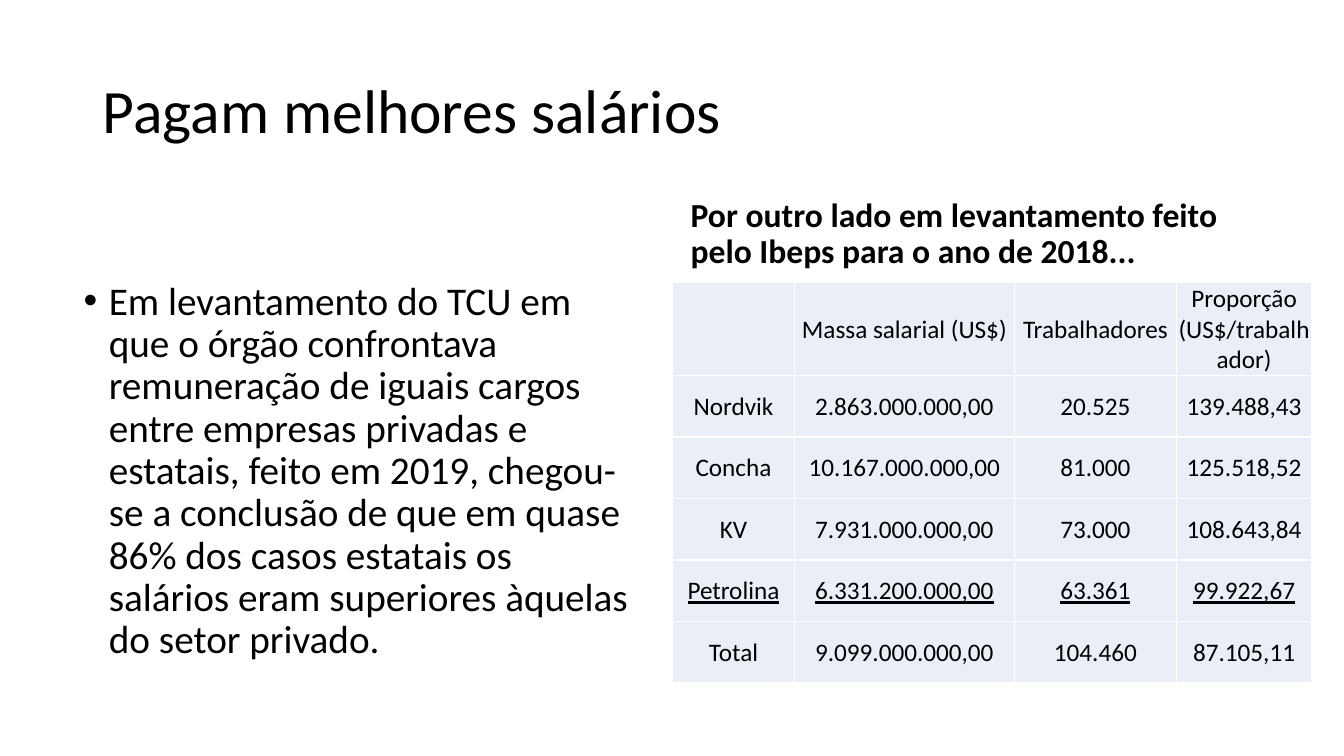
"""Build a slide comparing salaries in state-owned and private companies."""
import dataclasses

import lxml.etree
import pptx
import pptx.dml.color
import pptx.enum.text
import pptx.oxml.ns
import pptx.util

Inches = pptx.util.Inches
Align = pptx.enum.text.PP_ALIGN
Anchor = pptx.enum.text.MSO_ANCHOR


@dataclasses.dataclass(frozen=True)
class Theme:
    """Hold the colours, font and type sizes of the slide."""
    font: str = "Calibri"
    ink: str = "000000"
    cell: str = "EAEFF7"
    border: str = "FFFFFF"
    title: int = 44
    body: int = 28
    heading: int = 24
    table: int = 18


THEME = Theme()


def rgb(value):
    """Return a colour from its hexadecimal form."""
    return pptx.dml.color.RGBColor.from_string(value)


def write(frame, text, *, size, align=Align.LEFT, anchor=Anchor.TOP, bold=False,
          underline=False, spacing=1.0, before=0):
    """Write one formatted paragraph into a text frame and return it."""
    frame.word_wrap = True
    frame.vertical_anchor = anchor
    paragraph = frame.paragraphs[0]
    paragraph.alignment = align
    paragraph.line_spacing = spacing
    paragraph.space_before = pptx.util.Pt(before)
    run = paragraph.add_run()
    run.text = text
    run.font.name = THEME.font
    run.font.size = pptx.util.Pt(size)
    run.font.bold = bold
    run.font.underline = underline
    run.font.color.rgb = rgb(THEME.ink)
    return paragraph


def add_xml(parent, tag, **attributes):
    """Append a DrawingML element and return it."""
    return lxml.etree.SubElement(parent, pptx.oxml.ns.qn(tag), attributes)


class SlideBuilder:
    """Hold the theme and the current slide."""

    def __init__(self, slide, theme):
        """Keep the slide and its theme."""
        self.slide = slide
        self.theme = theme

    def placeholder(self, index, box, text, **style):
        """Move a placeholder, fill it and return its paragraph."""
        holder = self.slide.placeholders[index]
        holder.left, holder.top, holder.width, holder.height = map(Inches, box)
        holder.text_frame.auto_size = pptx.enum.text.MSO_AUTO_SIZE.NONE
        return write(holder.text_frame, text, spacing=0.9, **style)

    def bullet(self, index, box, text, **style):
        """Fill a placeholder with a bulleted paragraph."""
        paragraph = self.placeholder(index, box, text, **style)
        properties = paragraph._p.get_or_add_pPr()
        indent = Inches(0.25)
        properties.set("marL", str(indent))
        properties.set("indent", str(-indent))
        add_xml(properties, "a:buFont", typeface="Arial")
        add_xml(properties, "a:buChar", char="•")

    def cell(self, cell, text, underline):
        """Format one table cell."""
        cell.margin_left = cell.margin_right = cell.margin_top = Inches(0.01)
        cell.margin_bottom = 0
        cell.vertical_anchor = Anchor.MIDDLE
        properties = cell._tc.get_or_add_tcPr()
        for side in "LRTB":
            line = add_xml(properties, f"a:ln{side}", w=str(pptx.util.Pt(1)))
            fill = add_xml(line, "a:solidFill")
            add_xml(fill, "a:srgbClr", val=self.theme.border)
        cell.fill.solid()
        cell.fill.fore_color.rgb = rgb(self.theme.cell)
        if text:
            write(cell.text_frame, text, size=self.theme.table, align=Align.CENTER,
                  anchor=Anchor.MIDDLE, underline=underline)

    def table(self, left, top, widths, heights, rows, underlined):
        """Add a table with one underlined row."""
        table = self.slide.shapes.add_table(
            len(rows), len(widths), Inches(left), Inches(top),
            Inches(sum(widths)), Inches(sum(heights))).table
        for column, width in zip(table.columns, widths):
            column.width = Inches(width)
        for number, (row, height) in enumerate(zip(rows, heights)):
            table.rows[number].height = Inches(height)
            for cell, text in zip(table.rows[number].cells, row):
                self.cell(cell, text, number == underlined)

    def remove_empty(self):
        """Remove the placeholders that hold no text."""
        for holder in list(self.slide.placeholders):
            if not holder.text_frame.text:
                holder.element.getparent().remove(holder.element)


SALARIES = [
    ("", "Massa salarial (US$)", "Trabalhadores", "Proporção (US$/trabalhador)"),
    ("Nordvik", "2.863.000.000,00", "20.525", "139.488,43"),
    ("Concha", "10.167.000.000,00", "81.000", "125.518,52"),
    ("KV", "7.931.000.000,00", "73.000", "108.643,84"),
    ("Petrolina", "6.331.200.000,00", "63.361", "99.922,67"),
    ("Total", "9.099.000.000,00", "104.460", "87.105,11"),
]


def main():
    """Build and save the presentation."""
    deck = pptx.Presentation()
    deck.slide_width, deck.slide_height = Inches(13.33), Inches(7.5)
    comparison = deck.slide_layouts.get_by_name("Comparison")
    builder = SlideBuilder(deck.slides.add_slide(comparison), THEME)
    builder.placeholder(0, (0.92, 0.4, 11.5, 1.45), "Pagam melhores salários",
                        size=THEME.title, anchor=Anchor.MIDDLE)
    builder.bullet(
        2, (0.73, 2.74, 5.64, 4.03),
        "Em levantamento do TCU em que o órgão confrontava remuneração de iguais "
        "cargos entre empresas privadas e estatais, feito em 2019, chegou-se a "
        "conclusão de que em quase 86% dos casos estatais os salários eram "
        "superiores àquelas do setor privado.",
        size=THEME.body, before=10)
    builder.placeholder(
        3, (6.75, 1.84, 5.67, 0.9),
        "Por outro lado em levantamento feito pelo Ibeps para o ano de 2018...",
        size=THEME.heading, anchor=Anchor.BOTTOM, bold=True, before=10)
    builder.remove_empty()
    builder.table(6.67, 2.8, (1.21, 2.18, 1.61, 1.34), [0.92] + [0.61] * 5,
                  SALARIES, underlined=4)
    deck.save("out.pptx")


if __name__ == "__main__":
    main()
